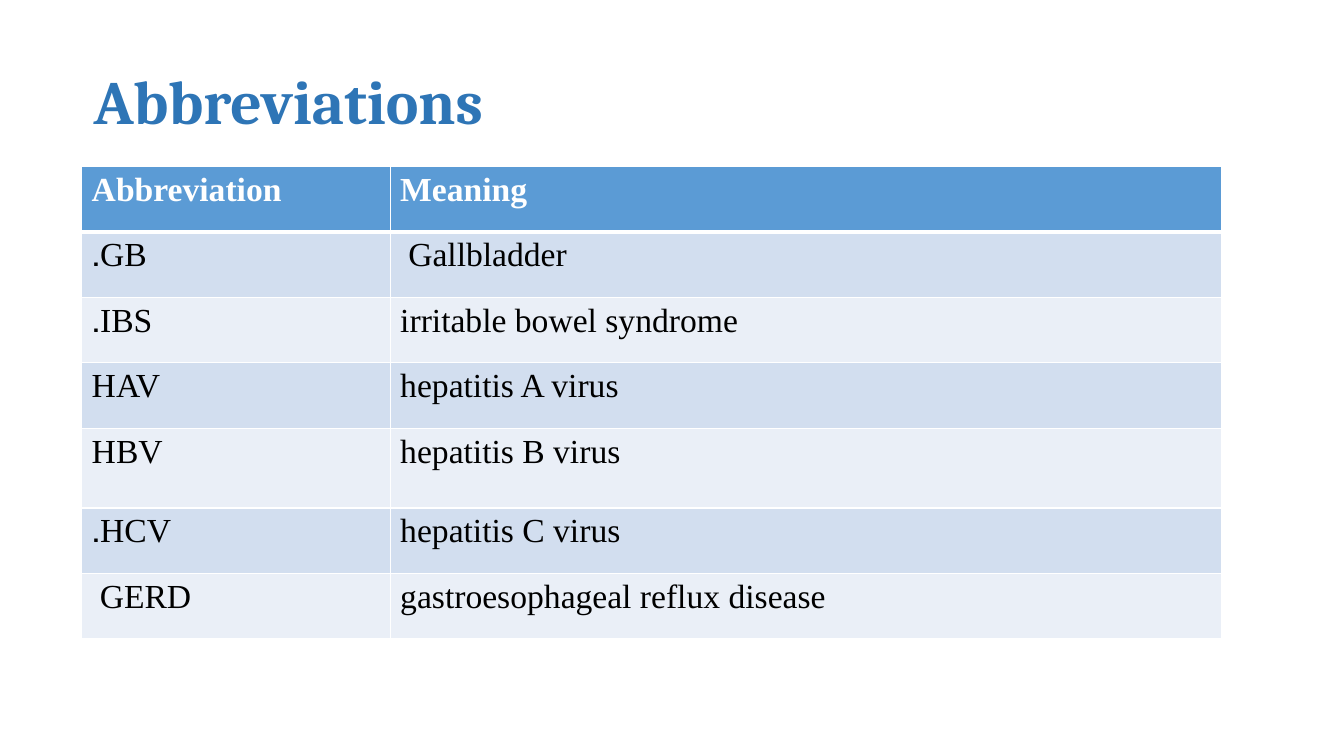
import pptx
import pptx.dml.color
import pptx.enum.text
import pptx.oxml
import pptx.oxml.ns
import pptx.util
from pptx.dml.color import RGBColor
from pptx.util import Inches

TITLE_BLUE = RGBColor(0x2E, 0x75, 0xB6)
HEADER_BLUE = RGBColor(0x5B, 0x9B, 0xD5)
BAND_DARK = RGBColor(0xD2, 0xDE, 0xEF)
BAND_LIGHT = RGBColor(0xEA, 0xEF, 0xF7)
WHITE = RGBColor(0xFF, 0xFF, 0xFF)
BLACK = RGBColor(0x00, 0x00, 0x00)

ROWS = [
    ("Abbreviation", "Meaning"),
    ("GB.", "Gallbladder"),
    ("IBS.", "irritable bowel syndrome"),
    ("HAV", "hepatitis A virus"),
    ("HBV", "hepatitis B virus"),
    ("HCV.", "hepatitis C virus"),
    ("GERD", "gastroesophageal reflux disease"),
]
COLUMN_WIDTHS = [3.06, 8.25]
ROW_HEIGHT = 0.65
TALL_ROW, TALL_HEIGHT = 4, 0.79
INDENTED = {"Gallbladder", "GERD"}


def write_right_to_left(text_frame, text, font_name, size, color, bold):
    """Write one right-to-left paragraph that is set flush left."""
    text_frame.text = text
    paragraph = text_frame.paragraphs[0]
    paragraph.alignment = pptx.enum.text.PP_ALIGN.LEFT
    paragraph._p.get_or_add_pPr().set("rtl", "1")
    font = paragraph.runs[0].font
    font.name = font_name
    font.size = pptx.util.Pt(size)
    font.color.rgb = color
    font.bold = bold


def add_white_borders(cell, bottom_width):
    properties = cell._tc.get_or_add_tcPr()
    for side, width in (("L", 1), ("R", 1), ("T", 1), ("B", bottom_width)):
        properties.append(pptx.oxml.parse_xml(
            f'<a:ln{side} {pptx.oxml.ns.nsdecls("a")} w="{pptx.util.Pt(width)}">'
            f'<a:solidFill><a:srgbClr val="{WHITE}"/></a:solidFill></a:ln{side}>'))


presentation = pptx.Presentation()
presentation.slide_width = Inches(13.33)
presentation.slide_height = Inches(7.5)
slide = presentation.slides.add_slide(presentation.slide_layouts[6])

title = slide.shapes.add_textbox(Inches(0.83), Inches(0.4), Inches(9.96), Inches(1.18))
title.text_frame.word_wrap = True
title.text_frame.vertical_anchor = pptx.enum.text.MSO_ANCHOR.MIDDLE
write_right_to_left(title.text_frame, "Abbreviations", "Cambria", 44, TITLE_BLUE, True)

table = slide.shapes.add_table(
    len(ROWS), len(COLUMN_WIDTHS), Inches(0.81), Inches(1.65),
    Inches(sum(COLUMN_WIDTHS)), Inches(ROW_HEIGHT * len(ROWS))).table
for column, width in zip(table.columns, COLUMN_WIDTHS):
    column.width = Inches(width)

for row_index, texts in enumerate(ROWS):
    is_header = row_index == 0
    table.rows[row_index].height = Inches(
        TALL_HEIGHT if row_index == TALL_ROW else ROW_HEIGHT)
    if is_header:
        fill_color = HEADER_BLUE
    else:
        fill_color = BAND_DARK if row_index % 2 else BAND_LIGHT
    for column_index, text in enumerate(texts):
        cell = table.cell(row_index, column_index)
        write_right_to_left(cell.text_frame, text, "Times New Roman", 24,
                            WHITE if is_header else BLACK, is_header)
        cell.margin_left = Inches(0.18 if text in INDENTED else 0.1)
        add_white_borders(cell, 3 if is_header else 1)
        cell.fill.solid()
        cell.fill.fore_color.rgb = fill_color

presentation.save("out.pptx")
